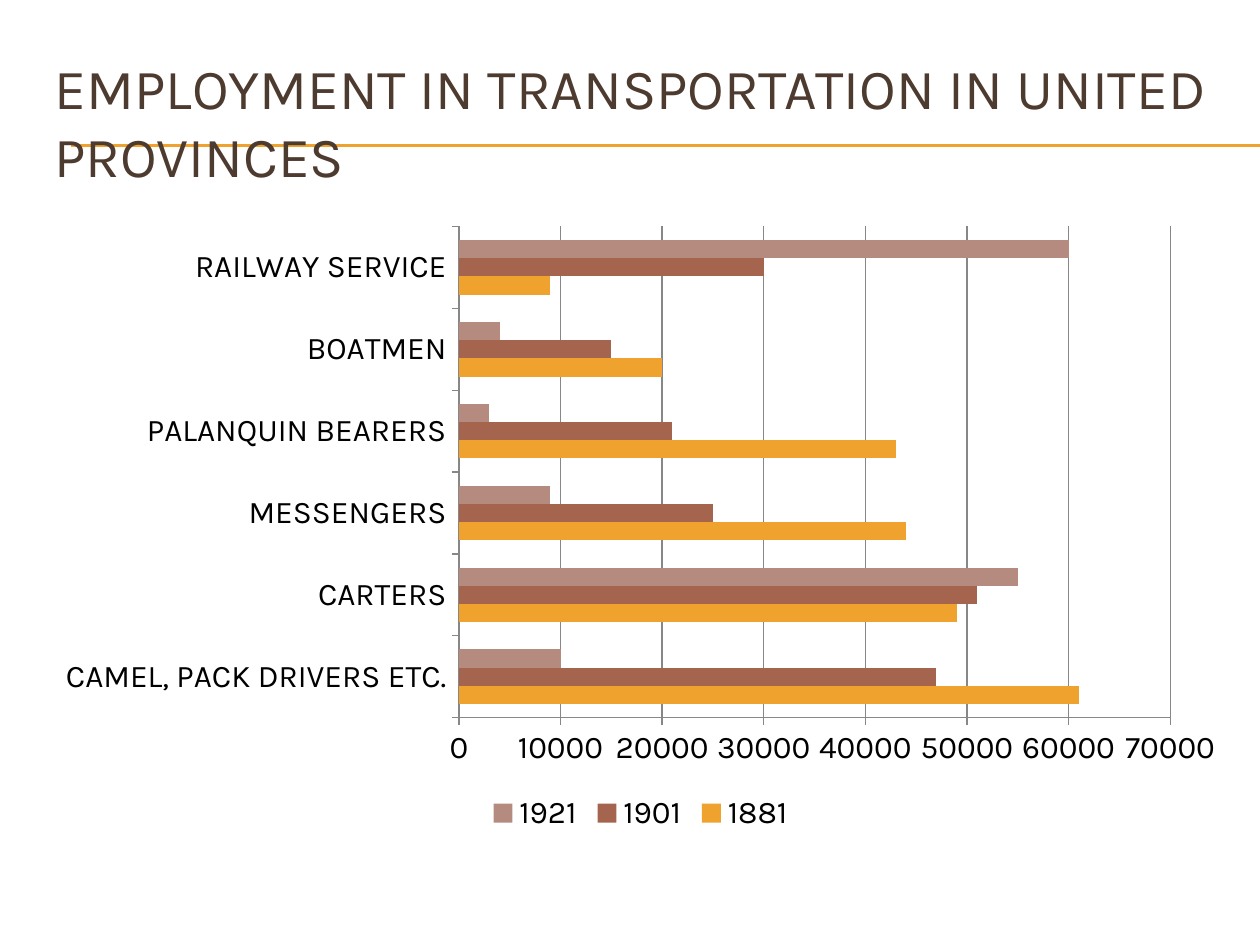
import pptx
import pptx.chart.data
import pptx.dml.color
import pptx.enum.chart
import pptx.enum.shapes
import pptx.enum.text
import pptx.oxml
import pptx.oxml.ns
import pptx.util

RGB = pptx.dml.color.RGBColor
GOLD = RGB(0xF0, 0xA2, 0x2E)
RUST = RGB(0xA5, 0x64, 0x4E)
ROSE = RGB(0xB5, 0x8B, 0x80)
BROWN = RGB(0x4E, 0x3B, 0x30)
GREY = RGB(0x87, 0x87, 0x87)
BLACK = RGB(0, 0, 0)
FONT = "Karla"

TITLE = "EMPLOYMENT IN TRANSPORTATION IN UNITED PROVINCES"
JOBS = ["CAMEL, PACK DRIVERS ETC.", "CARTERS", "MESSENGERS",
        "PALANQUIN BEARERS", "BOATMEN", "RAILWAY SERVICE"]
YEARS = [
    ("1881", GOLD, (61000, 49000, 44000, 43000, 20000, 9000)),
    ("1901", RUST, (47000, 51000, 25000, 21000, 15000, 30000)),
    ("1921", ROSE, (10000, 55000, 9000, 3000, 4000, 60000)),
]
WIDE, HIGH = 1260, 945
TITLE_BOX = (42, 63, 1197, 116)
CHART_BOX = (42, 214, 1197, 624)
RULE_LEFT = 71
RULE_TOPS = (145, 146)


def px(num):
    return pptx.util.Emu(round(num * 914400 / 126))


def add_rule(slide, top):
    rule = slide.shapes.add_connector(
        pptx.enum.shapes.MSO_CONNECTOR.STRAIGHT,
        px(RULE_LEFT), px(top), px(WIDE), px(top))
    rule.line.color.rgb = GOLD
    rule.line.width = pptx.util.Pt(0.75)
    node = rule.element
    node.spPr.append(pptx.oxml.parse_xml(
        f'<a:effectLst {pptx.oxml.ns.nsdecls("a")}/>'))
    node.getparent().insert(2, node)


def set_title(slide):
    title = slide.shapes.title
    title.left, title.top, title.width, title.height = map(px, TITLE_BOX)
    frame = title.text_frame
    frame.word_wrap = True
    frame.auto_size = pptx.enum.text.MSO_AUTO_SIZE.NONE
    frame.vertical_anchor = pptx.enum.text.MSO_ANCHOR.MIDDLE
    para = frame.paragraphs[0]
    para.alignment = pptx.enum.text.PP_ALIGN.LEFT
    run = para.add_run()
    run.text = TITLE
    run.font.name = FONT
    run.font.size = pptx.util.Pt(32.4)
    run.font.color.rgb = BROWN


def add_bars(slide):
    data = pptx.chart.data.CategoryChartData()
    data.categories = JOBS
    for year, hue, vals in YEARS:
        data.add_series(year, vals)
    enum = pptx.enum.chart
    chart = slide.shapes.add_chart(
        enum.XL_CHART_TYPE.BAR_CLUSTERED, *map(px, CHART_BOX), data).chart
    chart.has_title = False
    chart.font.name = FONT
    chart.font.size = pptx.util.Pt(18)
    chart.font.color.rgb = BLACK
    chart.has_legend = True
    chart.legend.position = enum.XL_LEGEND_POSITION.BOTTOM
    chart.legend.include_in_layout = False

    plot = chart.plots[0]
    plot.gap_width = 150
    plot.overlap = 0
    plot.vary_by_categories = False
    for bars, (year, hue, vals) in zip(plot.series, YEARS):
        bars.format.fill.solid()
        bars.format.fill.fore_color.rgb = hue

    grid = chart.value_axis
    grid.has_major_gridlines = True
    grid.minimum_scale, grid.maximum_scale = 0, 70000
    grid.major_unit = 10000
    chart.category_axis.has_major_gridlines = False
    for axis in (chart.category_axis, grid):
        axis.major_tick_mark = enum.XL_TICK_MARK.OUTSIDE
        axis.minor_tick_mark = enum.XL_TICK_MARK.NONE
    for part in (chart.category_axis, grid, grid.major_gridlines):
        part.format.line.color.rgb = GREY
        part.format.line.width = pptx.util.Pt(0.75)


def main():
    deck = pptx.Presentation()
    deck.slide_width, deck.slide_height = px(WIDE), px(HIGH)
    slide = deck.slides.add_slide(deck.slide_layouts[5])
    set_title(slide)
    for top in RULE_TOPS:
        add_rule(slide, top)
    add_bars(slide)
    deck.save("out.pptx")


if __name__ == "__main__":
    main()
